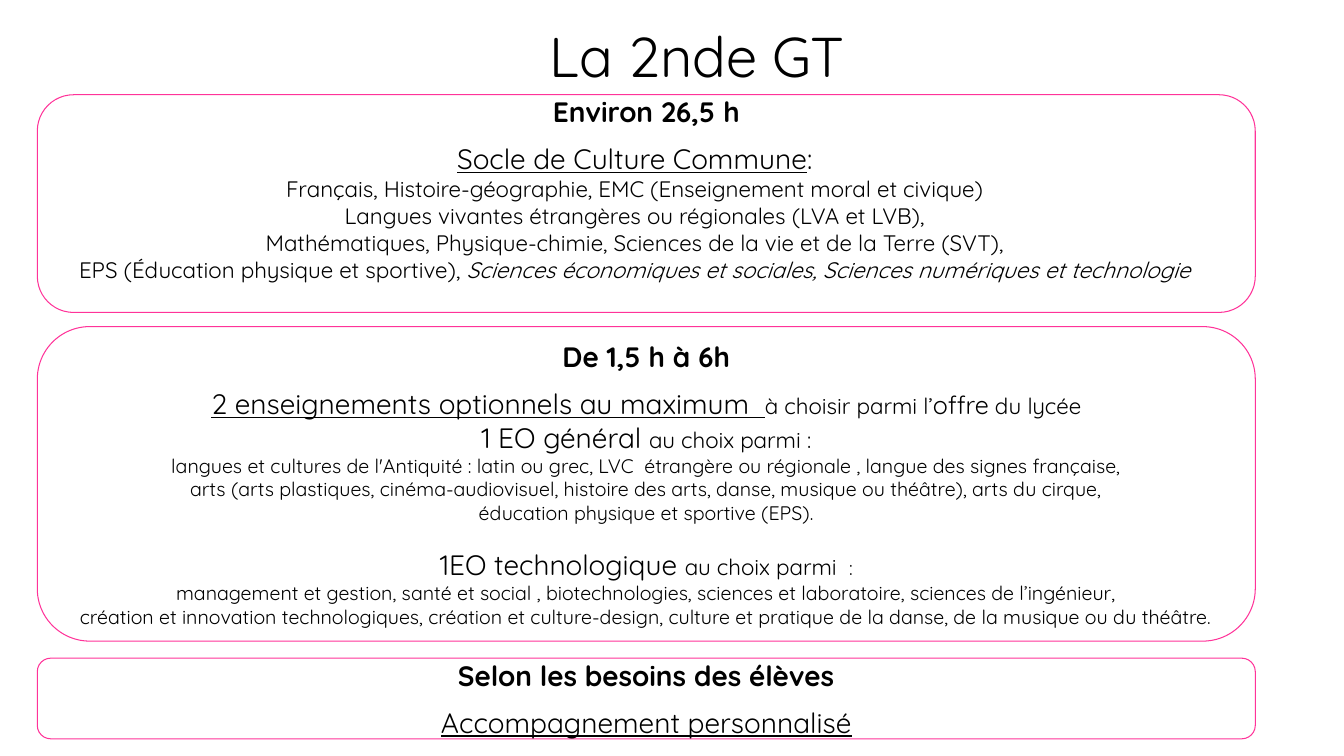
from dataclasses import dataclass

from pptx import Presentation
from pptx.dml.color import RGBColor
from pptx.enum.shapes import MSO_SHAPE as Shape
from pptx.enum.text import MSO_ANCHOR as Anchor, PP_ALIGN as Align
from pptx.util import Inches, Pt

FONT = "Quicksand"
INK, PINK = "000000", "FF3399"
LEFT, WIDTH = 0.37, 12.08


@dataclass
class Run:
    text: str
    size: int | None = None
    under: bool = False
    ital: bool = False


@dataclass
class Line:
    runs: list[Run]
    size: int = 14
    bold: bool = False
    gap: float = 0
    right: float = 0


@dataclass
class Box:
    top: float
    height: float
    lines: list[Line]
    foot: float = 0.05


def color(code: str) -> RGBColor:
    return RGBColor.from_string(code)


def plain(size: int, *texts: str) -> list[Line]:
    return [Line([Run(text)], size) for text in texts]


def head(text: str) -> Line:
    return Line([Run(text)], 20, bold=True)


def write(para, line: Line) -> None:
    para.alignment = Align.CENTER
    para.space_before = Pt(line.gap)
    font = para.font
    font.name, font.size, font.bold = FONT, Pt(line.size), line.bold
    font.color.rgb = color(INK)
    if line.right:
        para._p.get_or_add_pPr().set("marR", str(Inches(line.right)))
    for part in line.runs:
        run = para.add_run()
        run.text = part.text
        if part.size:
            run.font.size = Pt(part.size)
        if part.under:
            run.font.underline = True
        if part.ital:
            run.font.italic = True


def draw(slide, box: Box) -> None:
    shape = slide.shapes.add_shape(
        Shape.ROUNDED_RECTANGLE,
        Inches(LEFT), Inches(box.top), Inches(WIDTH), Inches(box.height))
    shape.shadow.inherit = False
    shape.fill.background()
    shape.line.color.rgb = color(PINK)
    shape.line.width = Pt(0.75)
    frame = shape.text_frame
    frame.word_wrap = False
    frame.vertical_anchor = Anchor.MIDDLE
    frame.margin_top, frame.margin_bottom = Inches(0.05), Inches(box.foot)
    for i, line in enumerate(box.lines):
        write(frame.add_paragraph() if i else frame.paragraphs[0], line)


# Options, common core, personal support
BOXES = [
    Box(3.24, 3.12, [
        head("De 1,5 h à 6h"),
        Line([Run("2 enseignements optionnels au maximum  ", 20, under=True),
              Run("à choisir parmi l’"), Run("offre", 18),
              Run(" du lycée")], 16, gap=9.5),
        Line([Run("1 EO général ", 20), Run("au choix parmi :")], 16),
        *plain(
            14,
            "langues et cultures de l'Antiquité : latin ou grec, LVC  étrangère"
            " ou régionale , langue des signes française,",
            "arts (arts plastiques, cinéma-audiovisuel, histoire des arts, "
            "danse, musique ou théâtre), arts du cirque,",
            "éducation physique et sportive (EPS)."),
        Line([Run("1EO technologique ", 20), Run("au choix parmi  "),
              Run(":", 14)], 16, gap=16.5),
        *plain(
            14,
            "management et gestion, santé et social , biotechnologies, "
            "sciences et laboratoire, sciences de l’ingénieur,",
            "création et innovation technologiques, création et culture-design,"
            " culture et pratique de la danse, de la musique ou du théâtre."),
    ]),
    Box(0.94, 2.16, [
        head("Environ 26,5 h"),
        Line([Run("Socle de Culture Commune", under=True), Run(":")],
             20, gap=9.5, right=0.23),
        *plain(
            16,
            "Français, Histoire-géographie, EMC (Enseignement moral et civique)",
            "Langues vivantes étrangères ou régionales (LVA et LVB),",
            "Mathématiques, Physique-chimie, Sciences de la vie et de la Terre"
            " (SVT),"),
        Line([Run("EPS (Éducation physique et sportive), "),
              Run("Sciences économiques et sociales, "
                  "Sciences numériques et technologie", ital=True)], 16),
    ], foot=0.34),
    Box(6.53, 0.8, [
        head("Selon les besoins des élèves"),
        Line([Run("Accompagnement personnalisé", under=True)], 20, gap=9.5),
    ]),
]


def main() -> None:
    deck = Presentation()
    deck.slide_width, deck.slide_height = Inches(13.33), Inches(7.5)
    slide = deck.slides.add_slide(deck.slide_layouts[5])

    # Title
    title = slide.shapes.title
    title.left, title.top = Inches(4.53), Inches(0.16)
    title.width, title.height = Inches(4.76), Inches(0.77)
    title.text_frame.vertical_anchor = Anchor.TOP
    write(title.text_frame.paragraphs[0], Line([Run("La 2nde GT")], 40))

    # Framed blocks
    for box in BOXES:
        draw(slide, box)
    deck.save("out.pptx")


if __name__ == "__main__":
    main()
